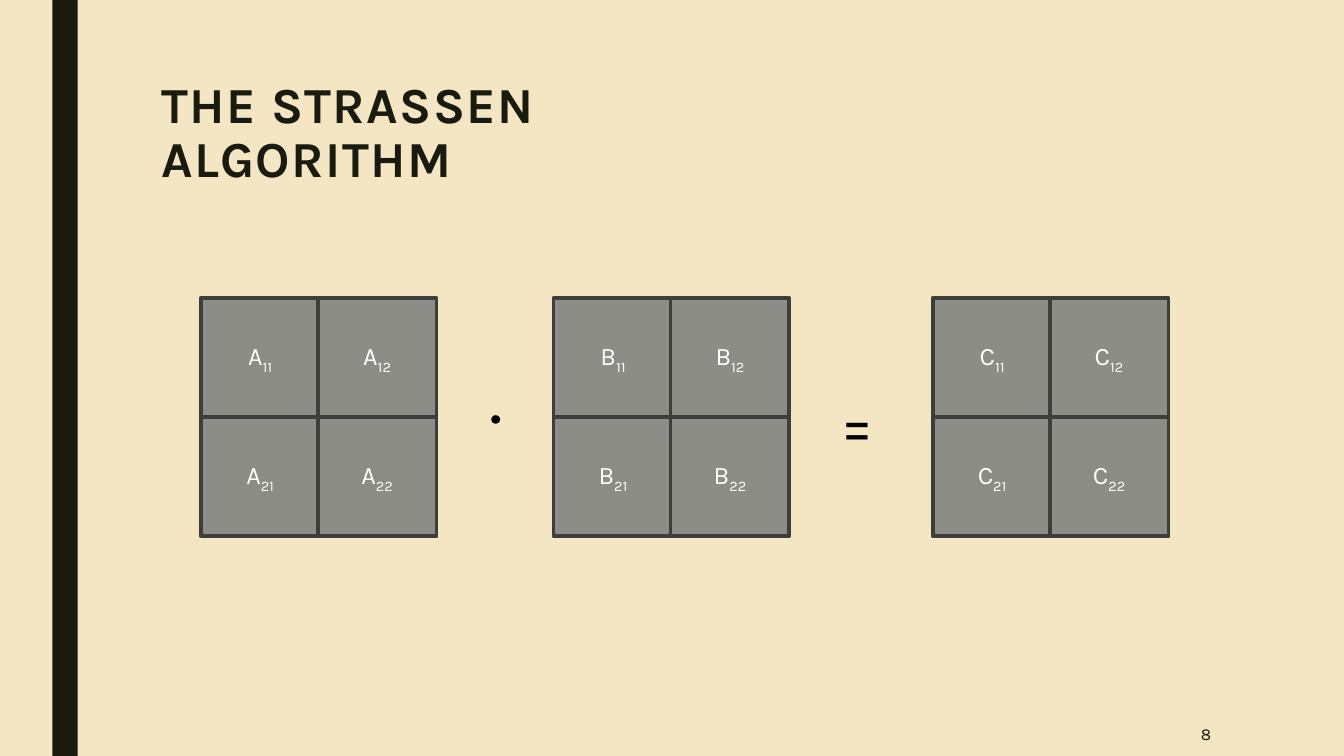
from pptx import Presentation
from pptx.dml.color import RGBColor
from pptx.enum.shapes import MSO_SHAPE
from pptx.enum.text import MSO_ANCHOR, MSO_AUTO_SIZE, PP_ALIGN
from pptx.util import Inches, Pt

RECTANGLE = MSO_SHAPE.RECTANGLE
TOP, MIDDLE = MSO_ANCHOR.TOP, MSO_ANCHOR.MIDDLE
LEFT, CENTER, RIGHT = PP_ALIGN.LEFT, PP_ALIGN.CENTER, PP_ALIGN.RIGHT
NO_FIT = MSO_AUTO_SIZE.NONE

WIDTH, HEIGHT = 13.33, 7.5
FONT = "Karla"
CREAM, INK, BLACK, WHITE = "F5E6C3", "191B0E", "000000", "FFFFFF"
GRAY, EDGE = "8C8D86", "3D3E3B"

# Grid of the matrices
CELL = 1.18
COLUMN_STEP, ROW_STEP = 1.16, 1.18
MATRIX_TOP = 2.96
MATRICES = {"A": 1.99, "B": 5.49, "C": 9.25}


def color(hex_value):
    return RGBColor.from_string(hex_value)


def box(left, top, width, height):
    return [Inches(value) for value in (left, top, width, height)]


def format_run(run, size, hex_value, bold=False):
    run.font.name = FONT
    run.font.size = Pt(size)
    run.font.bold = bold
    run.font.color.rgb = color(hex_value)


def add_rectangle(slide, area, fill, line=None):
    shape = slide.shapes.add_shape(RECTANGLE, *box(*area))
    shape.shadow.inherit = False
    shape.fill.solid()
    shape.fill.fore_color.rgb = color(fill)
    if line:
        shape.line.color.rgb = color(line)
        shape.line.width = Pt(2.75)
    else:
        shape.line.fill.background()
    return shape


def add_title(slide, text, area):
    title = slide.shapes.title
    title.left, title.top, title.width, title.height = box(*area)
    frame = title.text_frame
    frame.text = text
    frame.word_wrap = True
    frame.auto_size = NO_FIT
    frame.vertical_anchor = TOP
    paragraph = frame.paragraphs[0]
    paragraph.alignment = LEFT
    paragraph.line_spacing = 0.89
    run = paragraph.runs[0]
    format_run(run, 36, INK, bold=True)
    run.font._element.set("spc", "100")  # letter spacing


def add_text(slide, text, area, size, hex_value, align=LEFT, anchor=TOP, wrap=True):
    frame = slide.shapes.add_textbox(*box(*area)).text_frame
    frame.text = text
    frame.word_wrap = wrap
    frame.vertical_anchor = anchor
    paragraph = frame.paragraphs[0]
    paragraph.alignment = align
    format_run(paragraph.runs[0], size, hex_value)


def add_matrix(slide, name, left):
    for row in range(2):
        for column in range(2):
            area = (left + column * COLUMN_STEP, MATRIX_TOP + row * ROW_STEP, CELL, CELL)
            frame = add_rectangle(slide, area, GRAY, EDGE).text_frame
            frame.vertical_anchor = MIDDLE
            paragraph = frame.paragraphs[0]
            paragraph.alignment = CENTER
            for text in (name, f"{row + 1}{column + 1}"):
                run = paragraph.add_run()
                run.text = text
                format_run(run, 18, WHITE)
            run.font._element.set("baseline", "-25000")  # subscript index


def main():
    presentation = Presentation()
    presentation.slide_width = Inches(WIDTH)
    presentation.slide_height = Inches(HEIGHT)
    slide = presentation.slides.add_slide(presentation.slide_layouts[5])

    # Background and side bar
    slide.background.fill.solid()
    slide.background.fill.fore_color.rgb = color(CREAM)
    add_rectangle(slide, (0.52, 0, 0.25, HEIGHT), INK)

    add_title(slide, "THE STRASSEN ALGORITHM", (1.5, 0.75, 6.33, 1.14))

    # Equation: A . B = C
    for name, left in MATRICES.items():
        add_matrix(slide, name, left)
    add_text(slide, ".", (4.76, 3.4, 0.39, 1.01), 54, BLACK, wrap=False)
    add_text(slide, "=", (8.24, 3.75, 0.57, 0.88), 46, BLACK)

    # Slide number
    add_text(slide, "8", (10.36, 7.06, 1.75, 0.44), 12, INK, RIGHT, MIDDLE)

    presentation.save("out.pptx")


if __name__ == "__main__":
    main()
